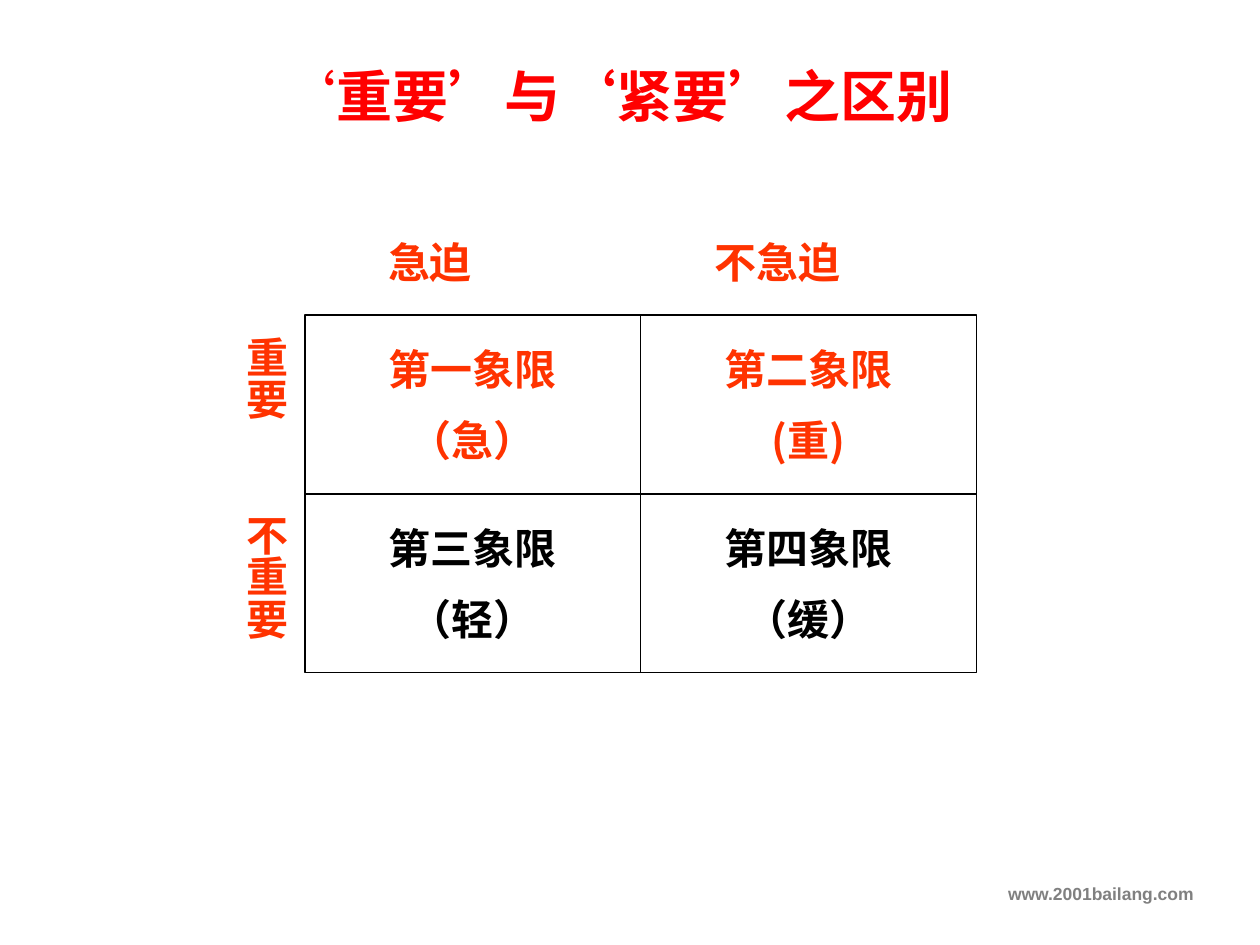
from pptx import Presentation
from pptx.dml.color import RGBColor
from pptx.enum.shapes import MSO_SHAPE
from pptx.enum.text import MSO_ANCHOR, MSO_AUTO_SIZE, PP_ALIGN
from pptx.oxml.ns import qn
from pptx.util import Inches, Pt

COLORS = {"title": "FF0000", "accent": "FF3300", "plain": "000000",
          "border": "000000", "footer": "808080"}
CJK = "Noto Sans CJK SC"
LABEL = {"size": Pt(24), "name": CJK, "bold": True}
TITLE = {"size": Pt(32), "name": CJK, "bold": True}
FOOTER = {"size": Pt(10), "name": "Arial", "bold": True}
TIGHT = {"margin_left": 0, "margin_right": 0,
         "margin_top": Inches(0.05), "margin_bottom": Inches(0.05)}
UPRIGHT = {"margin_left": 0, "margin_right": 0,
           "margin_top": 0, "margin_bottom": 0,
           "auto_size": MSO_AUTO_SIZE.NONE}


def apply_format(target, values):
    for attribute, value in values.items():
        setattr(target, attribute, value)


def add_run(paragraph, text, style, color):
    run = paragraph.add_run()
    run.text = text
    apply_format(run.font, style)
    run.font.color.rgb = RGBColor.from_string(COLORS[color])
    east_asian = run._r.get_or_add_rPr().makeelement(
        qn("a:ea"), {"typeface": style["name"]})
    run.font._element.find(qn("a:latin")).addnext(east_asian)


def add_caption(slide, box, text, style, color, align=PP_ALIGN.LEFT,
                frame_format=None, vertical=False):
    frame = slide.shapes.add_textbox(*map(Inches, box)).text_frame
    apply_format(frame, {"word_wrap": True,
                         "auto_size": MSO_AUTO_SIZE.SHAPE_TO_FIT_TEXT,
                         **(frame_format or {})})
    if vertical:
        frame._txBody.bodyPr.set("vert", "eaVert")
    paragraph = frame.paragraphs[0]
    paragraph.alignment = align
    add_run(paragraph, text, style, color)
    return paragraph


def add_title(slide, box):
    title = add_caption(slide, box, "‘", {**TITLE, "bold": False}, "title",
                        PP_ALIGN.CENTER)
    add_run(title, "重要’与‘紧要’之区别", TITLE, "title")


def add_quadrant(slide, box, lines, color):
    quadrant = slide.shapes.add_shape(MSO_SHAPE.RECTANGLE, *map(Inches, box))
    quadrant.shadow.inherit = False
    quadrant.fill.background()
    quadrant.line.color.rgb = RGBColor.from_string(COLORS["border"])
    quadrant.line.width = Pt(0.75)
    frame = quadrant.text_frame
    apply_format(frame, {**TIGHT, "word_wrap": False,
                         "vertical_anchor": MSO_ANCHOR.MIDDLE})
    for index, line in enumerate(lines):
        paragraph = frame.add_paragraph() if index else frame.paragraphs[0]
        paragraph.alignment = PP_ALIGN.CENTER
        if index:
            paragraph.space_before = Pt(12)
        add_run(paragraph, line, LABEL, color)


def add_matrix(slide, box):
    """Two by two quadrants, with captions above and to the left."""
    left, top, width, height = box
    cell_width, cell_height = width / 2, height / 2
    rows = [("accent", [("第一象限", "（急）"), ("第二象限", "(重)")]),
            ("plain", [("第三象限", "（轻）"), ("第四象限", "（缓）")])]
    for row, (color, quadrants) in enumerate(rows):
        for column, lines in enumerate(quadrants):
            add_quadrant(slide, (left + column * cell_width,
                                 top + row * cell_height,
                                 cell_width, cell_height), lines, color)

    urgency = [("急迫", 0.66, 0.83), ("不急迫", 3.25, 1.25)]
    for text, offset, caption_width in urgency:
        add_caption(slide, (left + offset, top - 0.67, caption_width, 0.51),
                    text, LABEL, "accent", frame_format=TIGHT)
    importance = [("重要", 0.17, 0.92), ("不重要", 1.58, 1.25)]
    for text, offset, caption_height in importance:
        add_caption(slide, (left - 0.51, top + offset, 0.4, caption_height),
                    text, LABEL, "accent", frame_format=UPRIGHT, vertical=True)


def main():
    presentation = Presentation()
    presentation.slide_width = Inches(10)
    presentation.slide_height = Inches(7.5)
    slide = presentation.slides.add_slide(presentation.slide_layouts[6])
    add_caption(slide, (0, 6.96, 9.57, 0.35), "www.2001bailang.com",
                FOOTER, "footer", PP_ALIGN.RIGHT)
    add_matrix(slide, (2.42, 2.5, 5.33, 2.84))
    add_title(slide, (1.96, 0.44, 5.87, 0.64))
    presentation.save("out.pptx")


if __name__ == "__main__":
    main()
